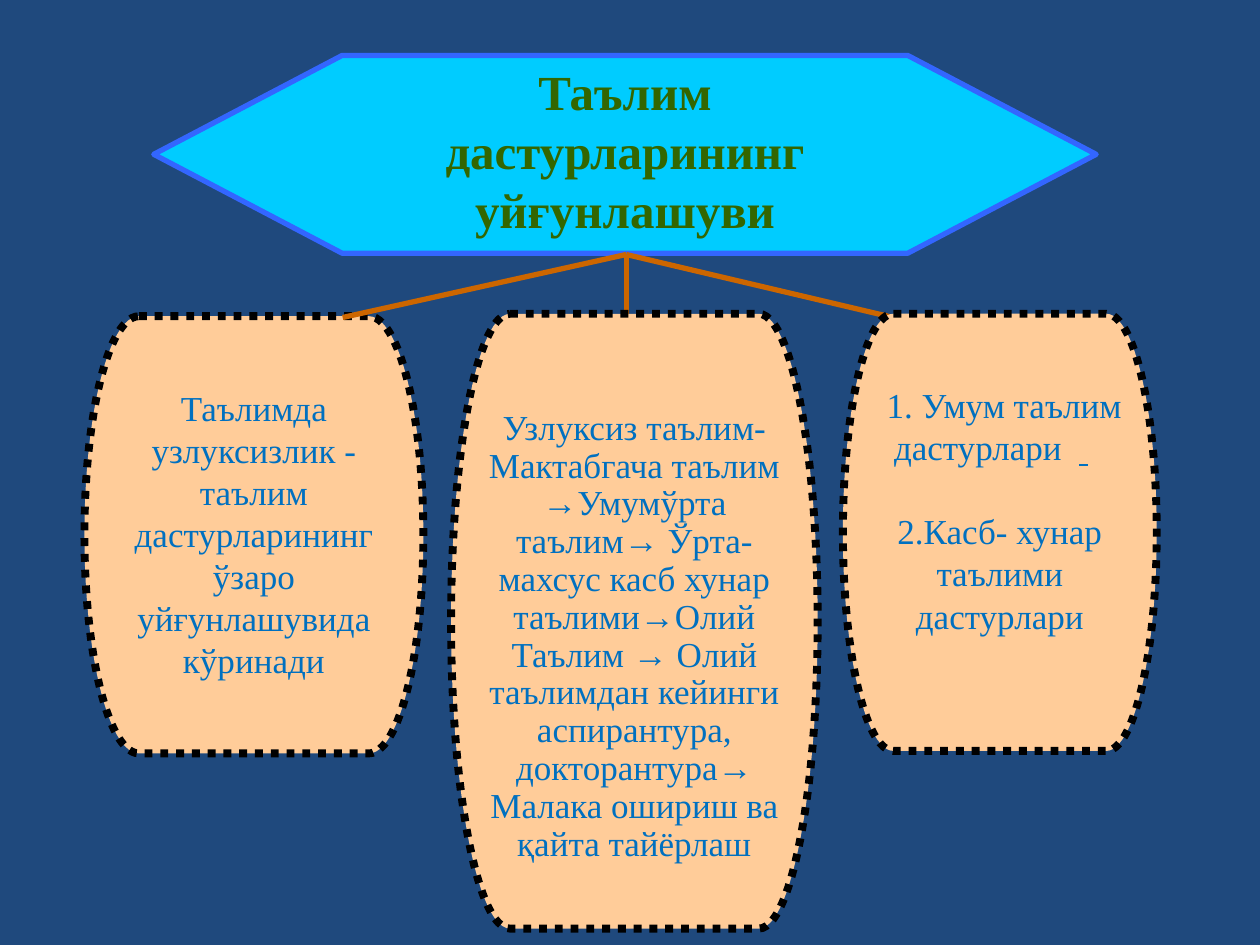
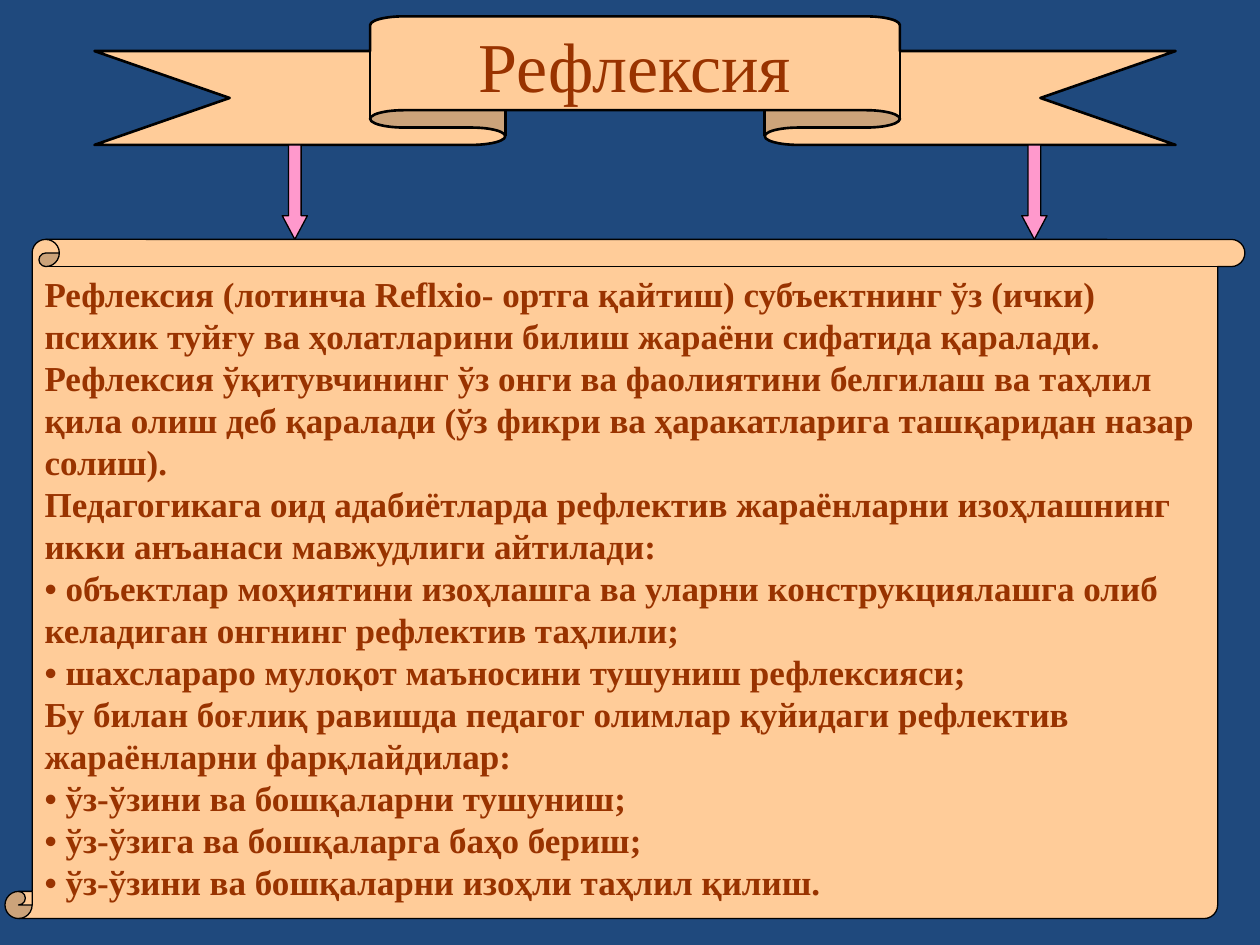
from dataclasses import dataclass

from pptx import Presentation
from pptx.dml.color import RGBColor
from pptx.enum.dml import MSO_LINE
from pptx.enum.shapes import MSO_CONNECTOR, MSO_SHAPE
from pptx.enum.text import MSO_ANCHOR, PP_ALIGN
from pptx.oxml.ns import qn
from pptx.util import Inches, Pt
from lxml import etree

HEXAGON = MSO_SHAPE.FLOWCHART_PREPARATION
TERMINATOR = MSO_SHAPE.FLOWCHART_TERMINATOR
RIBBON = MSO_SHAPE.UP_RIBBON
ARROW = MSO_SHAPE.DOWN_ARROW
SCROLL = MSO_SHAPE.VERTICAL_SCROLL
STRAIGHT = MSO_CONNECTOR.STRAIGHT
DOTTED = MSO_LINE.ROUND_DOT
TOP = MSO_ANCHOR.TOP
CENTER, LEFT = PP_ALIGN.CENTER, PP_ALIGN.LEFT


@dataclass(frozen=True)
class Theme:
    font: str = "Times New Roman"
    background: str = "1F497D"
    panel: str = "FFCC99"
    outline: str = "000000"
    banner: str = "00CCFF"
    banner_line: str = "3366FF"
    banner_text: str = "336600"
    panel_text: str = "0070C0"
    link: str = "CC6600"
    arrow: str = "FF99CC"
    reflection_text: str = "993300"
    body_size: int = 20
    banner_size: int = 28
    ribbon_size: int = 40


theme = Theme()


def add_block(page, kind, bounds, fill, line, width, dash=None, adjust=()):
    """Add a filled, outlined preset shape with top-anchored text."""
    block = page.shapes.add_shape(kind, *(Inches(value) for value in bounds))
    block.shadow.inherit = False
    block.fill.solid()
    block.fill.fore_color.rgb = RGBColor.from_string(fill)
    block.line.color.rgb = RGBColor.from_string(line)
    block.line.width = Pt(width)
    if dash is not None:
        block.line.dash_style = dash
    for index, value in enumerate(adjust):
        block.adjustments[index] = value
    block.text_frame.word_wrap = True
    block.text_frame.vertical_anchor = TOP
    return block


def write(para, text, *, color, size=theme.body_size, bold=False,
          underline=False, align=CENTER, line_spacing=None):
    """Append one formatted span to a paragraph."""
    para.alignment = align
    if line_spacing:
        para.line_spacing = line_spacing
    span = para.add_run()
    span.text = text
    span.font.name = theme.font
    span.font.size = Pt(size)
    span.font.bold = bold
    span.font.underline = underline
    span.font.color.rgb = RGBColor.from_string(color)


deck = Presentation()
deck.slide_width, deck.slide_height = Inches(10), Inches(7.5)
pages = [deck.slides.add_slide(deck.slide_layouts[6]) for _ in range(2)]
for page in pages:
    page.background.fill.solid()
    page.background.fill.fore_color.rgb = RGBColor.from_string(theme.background)
programs_page, reflection_page = pages

# Slide 1: banner
banner = add_block(programs_page, HEXAGON, (1.22, 0.44, 7.48, 1.57),
                   theme.banner, theme.banner_line, 3)
write(banner.text_frame.paragraphs[0], "Таълим дастурларининг уйғунлашуви",
      color=theme.banner_text, size=theme.banner_size, bold=True)

# Slide 1: dotted panels, with the links lying between the first and the rest
panel_bounds = [(0.67, 2.51, 2.69, 3.47), (3.58, 2.49, 2.91, 4.88), (6.69, 2.49, 2.49, 3.47)]
panels = []
for bounds in panel_bounds:
    panels.append(add_block(programs_page, TERMINATOR, bounds,
                            theme.panel, theme.outline, 4.5, DOTTED))
    if len(panels) > 1:
        continue
    for link_end in (2.72, 4.97, 7.09):
        link = programs_page.shapes.add_connector(
            STRAIGHT, Inches(4.97), Inches(2.02), Inches(link_end), Inches(2.52))
        link.line.color.rgb = RGBColor.from_string(theme.link)
        link.line.width = Pt(3)
        etree.SubElement(link._element.spPr, qn("a:effectLst"))

continuity, stages, programs = (panel.text_frame for panel in panels)
write(continuity.paragraphs[0],
      "Таълимда узлуксизлик - таълим дастурларининг ўзаро уйғунлашувида кўринади",
      color=theme.panel_text)
write(stages.paragraphs[0],
      "Узлуксиз таълим-Мактабгача таълим →Умумўрта таълим→ Ўрта-махсус касб хунар "
      "таълими→Олий Таълим → Олий таълимдан кейинги аспирантура, докторантура→ "
      "Малака ошириш ва қайта тайёрлаш",
      color=theme.panel_text, line_spacing=0.9)
general = programs.paragraphs[0]
write(general, " 1. Умум таълим дастурлари  ", color=theme.panel_text)
write(general, " ", color=theme.panel_text, underline=True)
write(general, "  ", color=theme.panel_text)
vocational = programs.add_paragraph()
vocational.space_before = Pt(24)
write(vocational, "2.Касб- хунар таълими дастурлари", color=theme.panel_text)

# Slide 2: title ribbon
ribbon = add_block(reflection_page, RIBBON, (0.75, 0.13, 8.58, 1.02),
                   theme.panel, theme.outline, 1.5, adjust=(0.27, 0.49))
write(ribbon.text_frame.paragraphs[0], "Рефлексия",
      color=theme.reflection_text, size=theme.ribbon_size)

# Slide 2: arrows from the ribbon to the scroll
for arrow_left in (2.24, 8.11):
    add_block(reflection_page, ARROW, (arrow_left, 1.15, 0.2, 0.75),
              theme.arrow, theme.outline, 0.75, adjust=(0.5, 0.94))

# Slide 2: scroll with the explanation
scroll = add_block(reflection_page, SCROLL, (0.04, 1.9, 9.84, 5.39),
                   theme.panel, theme.outline, 0.75, adjust=(0.04,))
explanation = [
    "Рефлексия (лотинча Reflxio- ортга қайтиш) субъектнинг ўз (ички) психик туйғу "
    "ва ҳолатларини билиш жараёни сифатида қаралади.",
    "Рефлексия ўқитувчининг ўз онги ва фаолиятини белгилаш ва таҳлил қила олиш деб "
    "қаралади (ўз фикри ва ҳаракатларига ташқаридан назар солиш).",
    "Педагогикага оид адабиётларда рефлектив жараёнларни изоҳлашнинг икки анъанаси "
    "мавжудлиги айтилади:",
    "• объектлар моҳиятини изоҳлашга ва уларни конструкциялашга олиб келадиган "
    "онгнинг рефлектив таҳлили;",
    "• шахслараро мулоқот маъносини тушуниш рефлексияси;",
    "Бу билан боғлиқ равишда педагог олимлар қуйидаги рефлектив жараёнларни "
    "фарқлайдилар:",
    "• ўз-ўзини ва бошқаларни тушуниш;",
    "• ўз-ўзига ва бошқаларга баҳо бериш;",
    "• ўз-ўзини ва бошқаларни изоҳли таҳлил қилиш.",
]
for index, sentence in enumerate(explanation):
    frame = scroll.text_frame
    para = frame.add_paragraph() if index else frame.paragraphs[0]
    write(para, sentence, color=theme.reflection_text, bold=True, align=LEFT)

deck.save("out.pptx")
